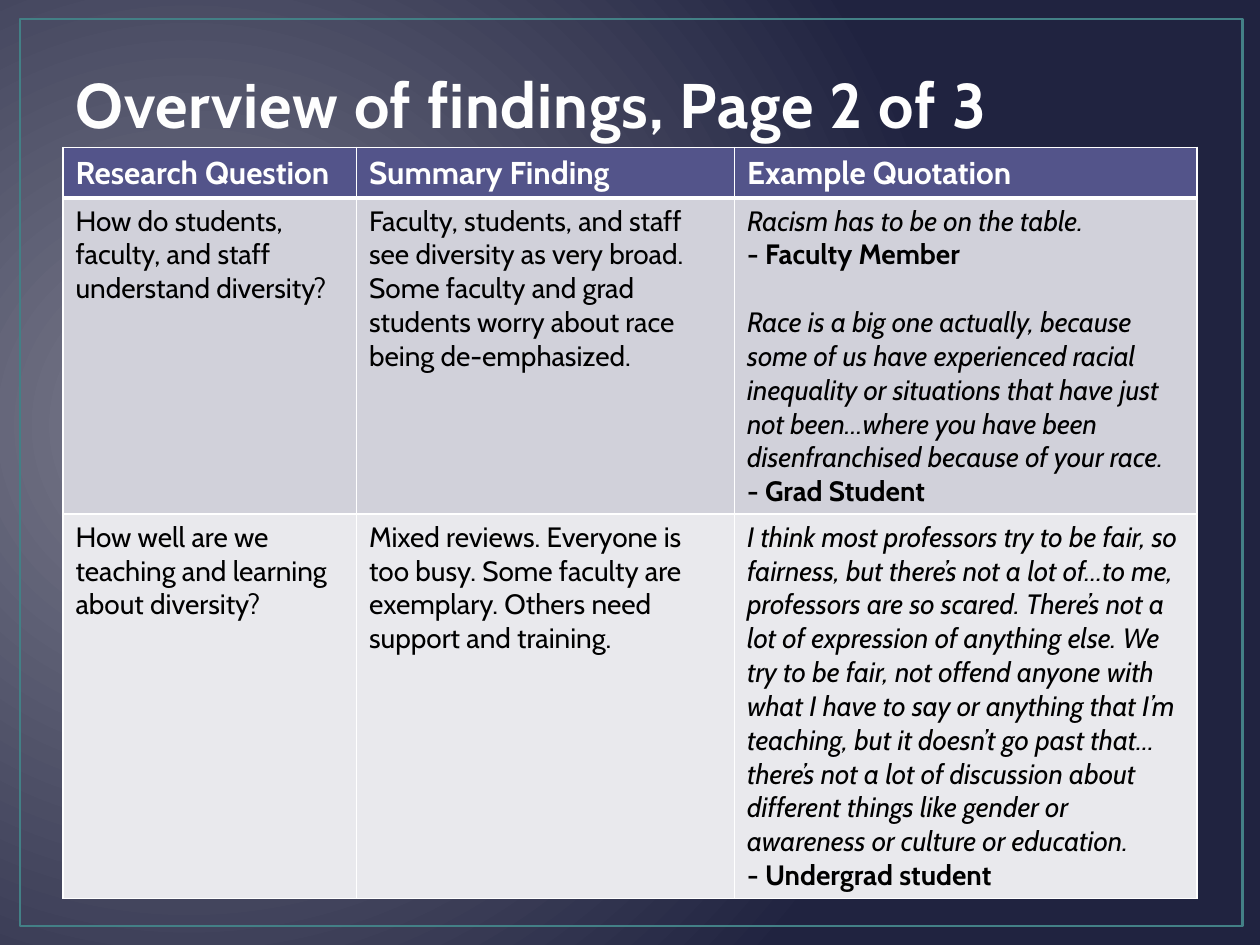
"""Build the findings overview slide: a title above a three-column table."""
from lxml.etree import SubElement
from pptx import Presentation
from pptx.dml.color import RGBColor
from pptx.enum.shapes import MSO_SHAPE
from pptx.enum.text import MSO_ANCHOR
from pptx.oxml.ns import qn
from pptx.util import Inches, Pt

COLORS = {
    "glow": "7A7B8C", "night": "202340", "frame": "438086", "title": "FEFEFE",
    "white": "FFFFFF", "black": "000000", "header": "53548A",
    "band1": "D1D1DA", "band2": "E9E9ED",
}
COLS = [2.33, 3, 3.67]
ROWS = [0.4, 2.51, 3.05]
FILLS = ["header", "band1", "band2"]
QUOTE = {"italic": True}
SPEAKER = {"bold": True}
CELLS = [
    [[(name, {"size": 18, "color": "white", "bold": True})]
     for name in ("Research Question", "Summary Finding", "Example Quotation")],
    [
        [("How do students, faculty, and staff understand diversity?", {})],
        [("Faculty, students, and staff see diversity as very broad. Some faculty and grad "
          "students worry about race being de-emphasized.", {})],
        [("Racism has to be on the table.", QUOTE),
         ("- Faculty Member", SPEAKER),
         ("Race is a big one actually, because some of us have experienced racial inequality "
          "or situations that have just not been…where you have been disenfranchised because "
          "of your race.", {"italic": True, "before": 19.3}),
         ("- Grad Student", SPEAKER)],
    ],
    [
        [("How well are we teaching and learning about diversity?", {})],
        [("Mixed reviews. Everyone is too busy. Some faculty are exemplary. Others need "
          "support and training.", {})],
        [("I think most professors try to be fair, so fairness, but there’s not a lot of…to "
          "me, professors are so scared. There’s not a lot of expression of anything else. We "
          "try to be fair, not offend anyone with what I have to say or anything that I’m "
          "teaching, but it doesn’t go past that…there’s not a lot of discussion about "
          "different things like gender or awareness or culture or education.", QUOTE),
         ("- Undergrad student", SPEAKER)],
    ],
]


def rgb(name):
    return RGBColor.from_string(COLORS[name])


def write(p, text, size=16, color="black", bold=False, italic=False, before=0):
    p.space_before = Pt(before)
    r = p.add_run()
    r.text = text
    r.font.name = "Cabin"
    r.font.size = Pt(size)
    r.font.bold = bold
    r.font.italic = italic
    r.font.color.rgb = rgb(color)
    return r


prs = Presentation()
prs.slide_width, prs.slide_height = Inches(10), Inches(7.5)
slide = prs.slides.add_slide(prs.slide_layouts[6])

fill = slide.background.fill
fill.gradient()
for stop, name in zip(fill.gradient_stops, ("glow", "night")):
    stop.color.rgb = rgb(name)
lin = slide.element.find(".//" + qn("a:lin"))
grad = lin.getparent()
grad.remove(lin)
circle = SubElement(grad, qn("a:path"), path="circle")
SubElement(circle, qn("a:fillToRect"), l="15000", t="50000", r="85000", b="60000")

frame = slide.shapes.add_shape(
    MSO_SHAPE.RECTANGLE, Inches(0.16), Inches(0.15), Inches(9.7), Inches(7.2))
frame.shadow.inherit = False
frame.fill.background()
frame.line.color.rgb = rgb("frame")
frame.line.width = Pt(1.5)

title = slide.shapes.add_textbox(Inches(0.5), Inches(0.3), Inches(9), Inches(0.87))
tf = title.text_frame
tf.word_wrap = True
tf.vertical_anchor = MSO_ANCHOR.BOTTOM
r = write(tf.paragraphs[0], "Overview of findings, Page 2 of 3",
          size=36, color="title", bold=True)
r.font._element.set("spc", "50")

table = slide.shapes.add_table(
    len(ROWS), len(COLS), Inches(0.5), Inches(1.17),
    Inches(sum(COLS)), Inches(sum(ROWS))).table
for col, width in zip(table.columns, COLS):
    col.width = Inches(width)
for row, height, band, texts in zip(table.rows, ROWS, FILLS, CELLS):
    row.height = Inches(height)
    for cell, paragraphs in zip(row.cells, texts):
        tcPr = cell._tc.get_or_add_tcPr()
        for side in "LRTB":
            thick = (band, side) in (("header", "B"), ("band1", "T"))
            ln = SubElement(tcPr, qn(f"a:ln{side}"), w=str(Pt(3 if thick else 1)))
            solid = SubElement(ln, qn("a:solidFill"))
            SubElement(solid, qn("a:srgbClr"), val=COLORS["white"])
        cell.fill.solid()
        cell.fill.fore_color.rgb = rgb(band)
        tf = cell.text_frame
        for i, (text, style) in enumerate(paragraphs):
            write(tf.add_paragraph() if i else tf.paragraphs[0], text, **style)

prs.save("out.pptx")
